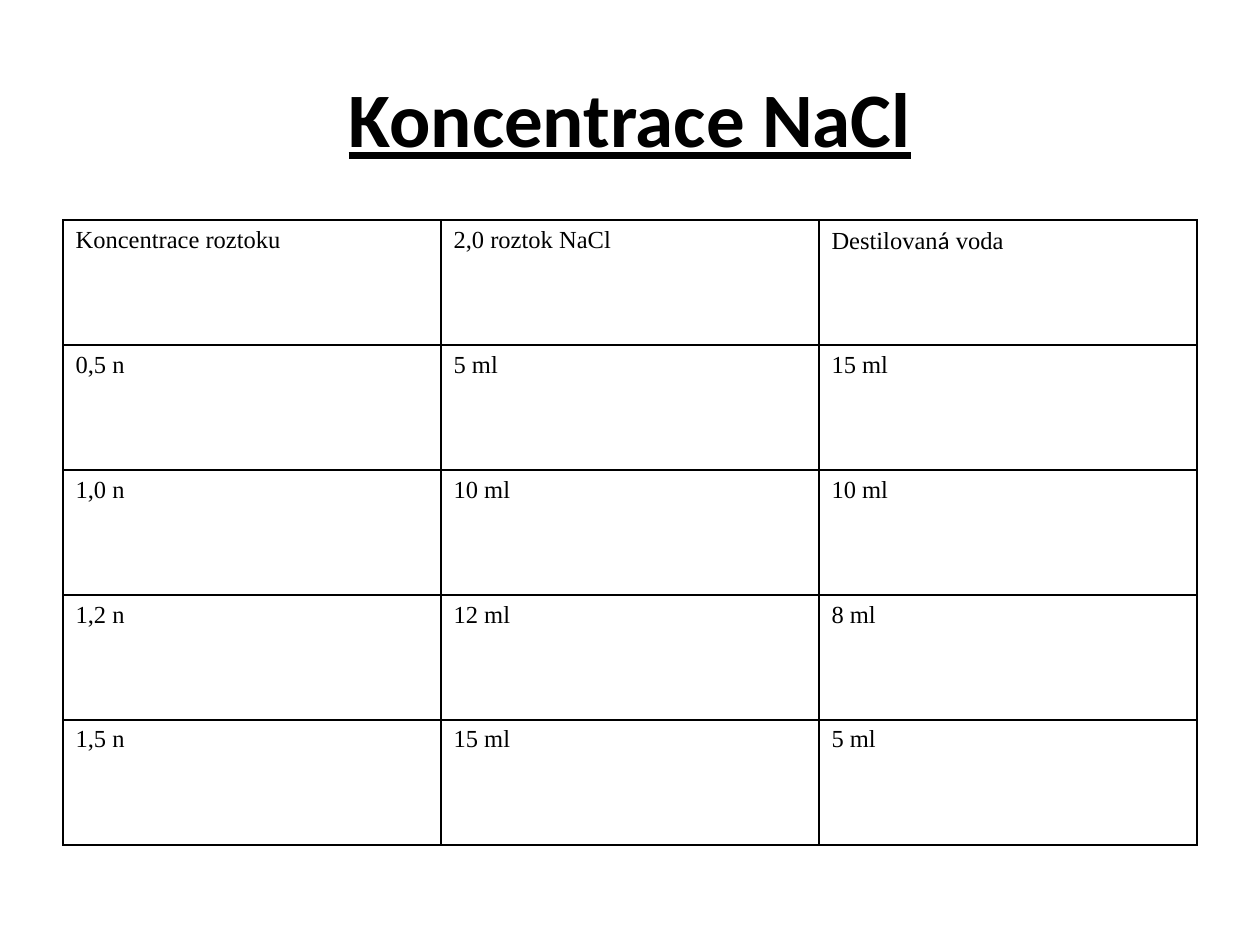
from dataclasses import dataclass

from lxml.etree import SubElement
from pptx import Presentation
from pptx.dml.color import RGBColor
from pptx.enum.text import MSO_ANCHOR, PP_ALIGN
from pptx.oxml.ns import qn
from pptx.util import Emu, Pt

# Content: a cell is a text, or a list of (text, font) runs
TITLE = "Koncentrace NaCl"
ROWS = [
    ["Koncentrace roztoku", "2,0 roztok NaCl",
     [("Destilovan", "Times New Roman"), ("á", "Calibri"), (" voda", "Times New Roman")]],
    ["0,5 n", "5 ml", "15 ml"],
    ["1,0 n", "10 ml", "10 ml"],
    ["1,2 n", "12 ml", "8 ml"],
    ["1,5 n", "15 ml", "5 ml"],
]


@dataclass(frozen=True)
class Theme:
    ink: str = "000000"
    title_font: str = "Calibri"
    title_size: int = 44
    body_font: str = "Times New Roman"
    body_size: int = 14
    border_width: int = 1


THEME = Theme()

# Layout in px
PX = 914400 // 126
SLIDE_WIDTH, SLIDE_HEIGHT = 1260, 945
MARGIN = 63
CONTENT_WIDTH = SLIDE_WIDTH - 2 * MARGIN
TITLE_TOP, TITLE_HEIGHT = 38, 158
TABLE_TOP, ROW_HEIGHT = 220, 125
INDENT = 48


def px(length):
    return Emu(length * PX)


def set_font(font, name, size):
    font.name = name
    font.size = Pt(size)
    font.color.rgb = RGBColor.from_string(THEME.ink)


def add_borders(cell):
    properties = cell._tc.get_or_add_tcPr()
    for side in ("a:lnL", "a:lnR", "a:lnT", "a:lnB"):
        line = SubElement(properties, qn(side), w=str(Pt(THEME.border_width)))
        fill = SubElement(line, qn("a:solidFill"))
        SubElement(fill, qn("a:srgbClr"), val=THEME.ink)


def fill_cell(cell, content):
    add_borders(cell)
    cell.fill.background()
    paragraph = cell.text_frame.paragraphs[0]
    set_font(paragraph.font, THEME.body_font, THEME.body_size)
    paragraph_properties = paragraph._p.get_or_add_pPr()
    paragraph_properties.set("marL", str(px(INDENT)))
    paragraph_properties.set("indent", str(px(-INDENT)))
    runs = [(content, THEME.body_font)] if isinstance(content, str) else content
    for text, font_name in runs:
        run = paragraph.add_run()
        run.text = text
        set_font(run.font, font_name, THEME.body_size)


def add_title(slide):
    shape = slide.shapes.add_textbox(
        px(MARGIN), px(TITLE_TOP), px(CONTENT_WIDTH), px(TITLE_HEIGHT))
    frame = shape.text_frame
    frame.word_wrap = True
    frame.vertical_anchor = MSO_ANCHOR.MIDDLE
    paragraph = frame.paragraphs[0]
    paragraph.text = TITLE
    paragraph.alignment = PP_ALIGN.CENTER
    set_font(paragraph.font, THEME.title_font, THEME.title_size)
    paragraph.font.bold = True
    paragraph.font.underline = True


def add_concentration_table(slide):
    table = slide.shapes.add_table(
        len(ROWS), len(ROWS[0]), px(MARGIN), px(TABLE_TOP),
        px(CONTENT_WIDTH), px(ROW_HEIGHT * len(ROWS))).table
    table.first_row = False
    table.horz_banding = False
    for row, contents in zip(table.rows, ROWS):
        for cell, content in zip(row.cells, contents):
            fill_cell(cell, content)


def main():
    presentation = Presentation()
    presentation.slide_width = px(SLIDE_WIDTH)
    presentation.slide_height = px(SLIDE_HEIGHT)
    slide = presentation.slides.add_slide(presentation.slide_layouts[6])
    add_title(slide)
    add_concentration_table(slide)
    presentation.save("out.pptx")


if __name__ == "__main__":
    main()
